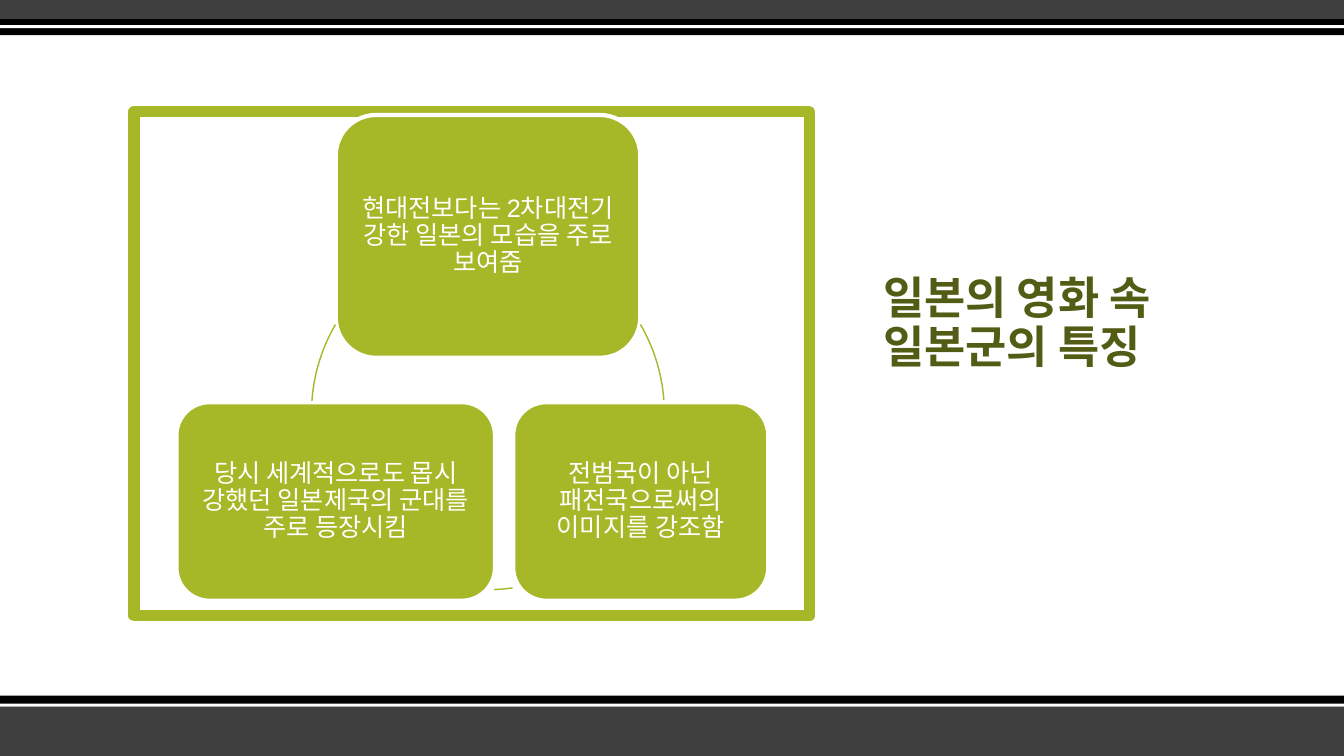
from lxml.etree import SubElement
from pptx import Presentation
from pptx.dml.color import RGBColor
from pptx.enum.shapes import MSO_SHAPE
from pptx.enum.text import MSO_ANCHOR, PP_ALIGN
from pptx.oxml.ns import qn
from pptx.util import Inches, Pt

COLORS = {"band": "404040", "black": "000000", "white": "FFFFFF",
          "green": "A6B727", "title": "535C14"}
LATIN_FONT = "Arial"
KOREAN_FONT = "Noto Sans CJK KR"
WIDTH, HEIGHT = 13.33, 7.5


def color(name):
    return RGBColor.from_string(COLORS[name])


def add_figure(slide, preset, box, fill=None, line=None, weight=1):
    figure = slide.shapes.add_shape(preset, *map(Inches, box))
    figure.shadow.inherit = False
    if fill:
        figure.fill.solid()
        figure.fill.fore_color.rgb = color(fill)
    else:
        figure.fill.background()
    if line:
        figure.line.color.rgb = color(line)
        figure.line.width = Pt(weight)
    else:
        figure.line.fill.background()
    return figure


def write(frame, text, size, tone, font, anchor, align, bold=False):
    frame.word_wrap = True
    frame.vertical_anchor = anchor
    paragraph = frame.paragraphs[0]
    paragraph.text = text
    paragraph.alignment = align
    paragraph.line_spacing = 0.9
    run = paragraph.runs[0]
    run.font.size = Pt(size)
    run.font.bold = bold
    run.font.color.rgb = color(tone)
    run.font.name = font
    SubElement(run.font._element, qn("a:ea")).set("typeface", KOREAN_FONT)


def add_bands(slide, top, bands):
    """Full-width stripes: offset from top, height, colour."""
    for offset, height, fill in bands:
        add_figure(slide, MSO_SHAPE.RECTANGLE,
                   (0, top + offset, WIDTH, height), fill)


def add_title(slide, box, text):
    title = slide.shapes.add_textbox(*map(Inches, box))
    write(title.text_frame, text, 32, "title", KOREAN_FONT,
          MSO_ANCHOR.BOTTOM, PP_ALIGN.LEFT, bold=True)


def add_cycle(slide, box):
    left, top, width, height = box
    add_figure(slide, MSO_SHAPE.RECTANGLE, box, line="green", weight=8)

    # Cards, each followed by the arc leading on from it (degrees)
    steps = [
        ((2.0, 0.03, 3.02, 2.41), (329.8, 356),
         "현대전보다는 2차대전기 강한 일본의 모습을 주로 보여줌"),
        ((3.76, 2.88, 2.53, 1.97), (82, 88),
         "전범국이 아닌 패전국으로써의 이미지를 강조함"),
        ((0.42, 2.88, 3.16, 1.97), (184, 210.2),
         "당시 세계적으로도 몹시 강했던 일본제국의 군대를 주로 등장시킴"),
    ]
    circle = (left + 1.76, top + 1.24, 3.5, 3.5)
    for (x, y, card_width, card_height), angles, text in steps:
        card = add_figure(slide, MSO_SHAPE.ROUNDED_RECTANGLE,
                          (left + x, top + y, card_width, card_height),
                          "green", "white", 3)
        frame = card.text_frame
        frame.margin_left = frame.margin_right = Inches(0.07)
        frame.margin_top = frame.margin_bottom = Inches(0.07)
        write(frame, text, 18, "white", LATIN_FONT,
              MSO_ANCHOR.MIDDLE, PP_ALIGN.CENTER)

        arc = add_figure(slide, MSO_SHAPE.ARC, circle, line="green")
        for index, angle in enumerate(angles):
            arc.adjustments[index] = angle * 0.6  # 60000 units per degree


def main():
    presentation = Presentation()
    presentation.slide_width = Inches(WIDTH)
    presentation.slide_height = Inches(HEIGHT)
    slide = presentation.slides.add_slide(presentation.slide_layouts[6])

    # Bottom and top bands
    add_bands(slide, 6.9, [(0.1, 0.5, "band"), (0, 0.11, "black"),
                           (0.08, 0.03, "white")])
    add_bands(slide, 0, [(0, 0.19, "band"), (0.19, 0.16, "black"),
                         (0.25, 0.03, "white")])

    # Framed cycle on the left, title on the right
    add_cycle(slide, (1.33, 1.11, 6.7, 5))
    add_title(slide, (8.66, 1.5, 3.42, 2.25), "일본의 영화 속 일본군의 특징")

    presentation.save("out.pptx")


if __name__ == "__main__":
    main()
